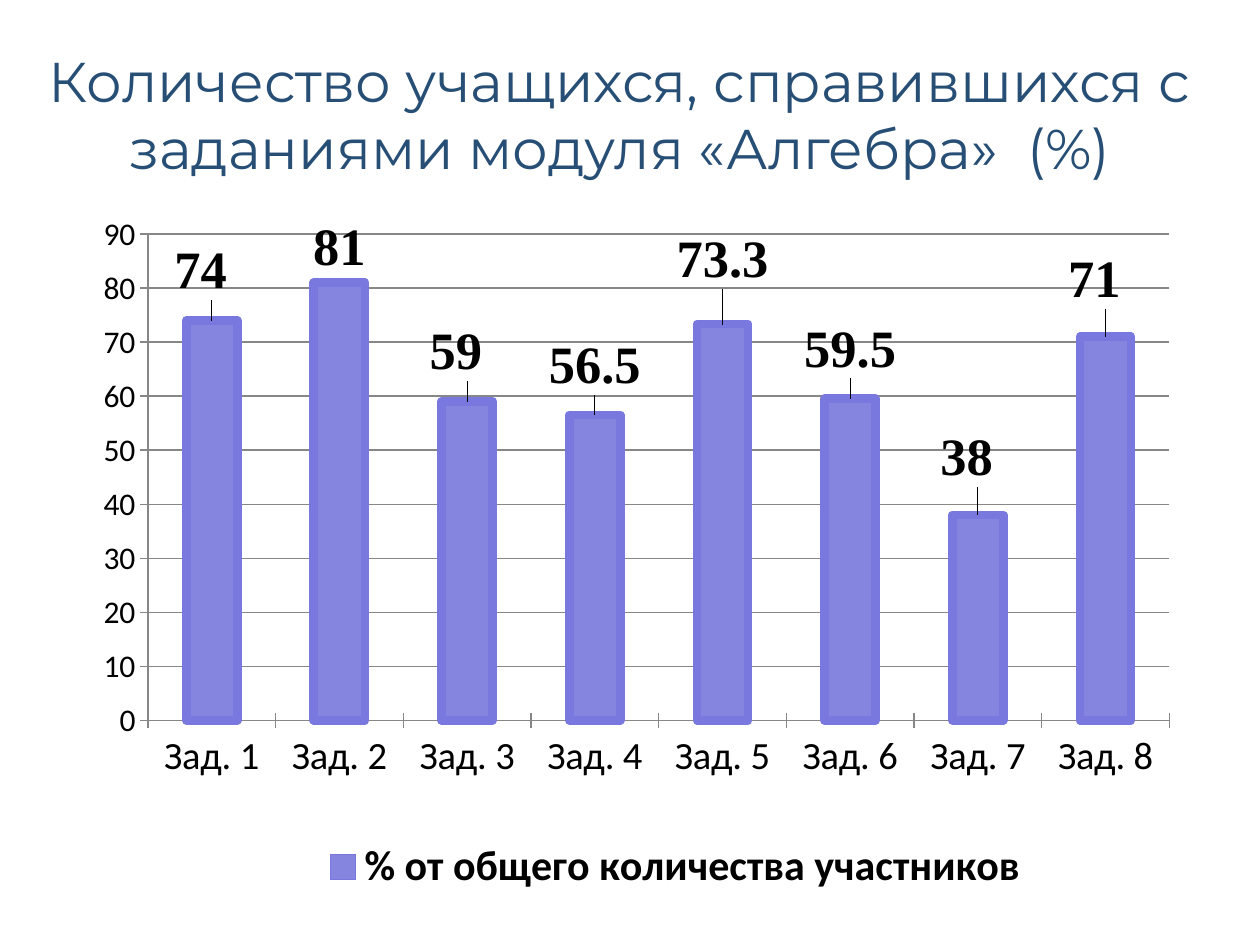
from lxml import etree
from pptx import Presentation
from pptx.chart.data import CategoryChartData
from pptx.dml.color import RGBColor
from pptx.enum.chart import XL_CHART_TYPE, XL_LABEL_POSITION, XL_LEGEND_POSITION, XL_TICK_MARK
from pptx.enum.text import MSO_ANCHOR, MSO_AUTO_SIZE, PP_ALIGN
from pptx.oxml.ns import qn
from pptx.util import Inches, Pt

COLUMN = XL_CHART_TYPE.COLUMN_CLUSTERED
OUTSIDE_END = XL_LABEL_POSITION.OUTSIDE_END
BOTTOM = XL_LEGEND_POSITION.BOTTOM
CROSS = XL_TICK_MARK.CROSS
MIDDLE = MSO_ANCHOR.MIDDLE
NO_FIT = MSO_AUTO_SIZE.NONE
CENTER = PP_ALIGN.CENTER

COLORS = {"title": "274E75", "text": "000000", "bar": "8585E0",
          "outline": "7878DE", "grid": "878787"}
TITLE = "Количество учащихся, справившихся с заданиями модуля «Алгебра»  (%)"
SERIES_NAME = "% от общего количества участников"
RESULTS = [74, 81, 59, 56.5, 73.3, 59.5, 38, 71]
LABEL_SHIFTS = [(-0.01, -0.02), (0, 0), (-0.01, -0.02), (0, -0.02),
                (0, -0.04), (0, -0.02), (-0.01, -0.03), (-0.01, -0.03)]


def color(name):
    """Return the named colour."""
    return RGBColor.from_string(COLORS[name])


def style_font(font, name, size, color_name, bold=False):
    """Set the face, size, colour and weight of a font."""
    font.name, font.size, font.bold = name, Pt(size), bold
    font.color.rgb = color(color_name)


def place_part(parent, after, **settings):
    """Give a chart part a manual layout, put behind the named child."""
    for old in parent.findall(qn("c:layout")):
        parent.remove(old)
    layout = etree.Element(qn("c:layout"))
    manual = etree.SubElement(layout, qn("c:manualLayout"))
    for tag, value in settings.items():
        etree.SubElement(manual, qn(f"c:{tag}")).set("val", str(value))
    if after:
        parent.find(qn(after)).addnext(layout)
    else:
        parent.insert(0, layout)


def add_title(page):
    """Fill and format the title placeholder."""
    title = page.shapes.title
    title.left, title.top = Inches(0), Inches(0.16)
    title.width, title.height = Inches(9.84), Inches(1.48)
    frame = title.text_frame
    frame.text = TITLE
    frame.word_wrap, frame.auto_size, frame.vertical_anchor = True, NO_FIT, MIDDLE
    paragraph = frame.paragraphs[0]
    paragraph.alignment = CENTER
    style_font(paragraph.runs[0].font, "Montserrat", 32, "title")


def style_axes(chart):
    """Format both axes and the gridlines."""
    for axis, size in ((chart.category_axis, 22), (chart.value_axis, 18)):
        axis.major_tick_mark = CROSS
        axis.format.line.color.rgb = color("grid")
        style_font(axis.tick_labels.font, "Calibri", size, "text")
    chart.value_axis.minimum_scale = 0
    chart.value_axis.maximum_scale = 90
    chart.value_axis.major_unit = 10
    chart.value_axis.has_major_gridlines = True
    chart.value_axis.major_gridlines.format.line.color.rgb = color("grid")


def style_bars(plot):
    """Format the columns and shift their value labels."""
    plot.gap_width = 150
    plot.vary_by_categories = False
    series = plot.series[0]
    series.format.fill.solid()
    series.format.fill.fore_color.rgb = color("bar")
    line = series.format.line
    line.color.rgb = color("outline")
    line.width = Pt(5)
    outline = series.format.line._get_or_add_ln()
    etree.SubElement(outline, qn("a:round"))
    labels = series.data_labels
    labels.show_value = True
    labels.position = OUTSIDE_END
    style_font(labels.font, "Times New Roman", 30, "text", True)
    for index in range(len(RESULTS)):
        label = series.points[index].data_label
        label.position = OUTSIDE_END
        style_font(label.font, "Times New Roman", 30, "text", True)
    for element, (x, y) in zip(labels._element.findall(qn("c:dLbl")), LABEL_SHIFTS):
        place_part(element, "c:idx", x=x, y=y)


def add_results_chart(page):
    """Add the column chart of results by task."""
    chart_data = CategoryChartData()
    chart_data.categories = [f"Зад. {number}" for number in range(1, len(RESULTS) + 1)]
    chart_data.add_series(SERIES_NAME, RESULTS)
    chart = page.shapes.add_chart(COLUMN, Inches(0.55), Inches(1.56),
                                  Inches(8.91), Inches(5.94), chart_data).chart
    chart.has_title = False
    style_font(chart.font, "Calibri", 18, "text")
    style_axes(chart)
    style_bars(chart.plots[0])
    chart.has_legend = True
    legend = chart.legend
    legend.position = BOTTOM
    legend.include_in_layout = False
    style_font(legend.font, "Calibri", 24, "text", True)
    place_part(legend._element, "c:legendPos", xMode="edge", yMode="edge", x=0.22, y=0.85)
    plot_area = chart._chartSpace.chart.plotArea
    place_part(plot_area, None, layoutTarget="inner", xMode="edge", yMode="edge",
               x=0.07, y=0.05, w=0.91, h=0.65)


def main():
    """Build and save the slide."""
    deck = Presentation()
    deck.slide_width, deck.slide_height = Inches(10), Inches(7.5)
    page = deck.slides.add_slide(deck.slide_layouts[5])
    add_title(page)
    add_results_chart(page)
    deck.save("out.pptx")


if __name__ == "__main__":
    main()
